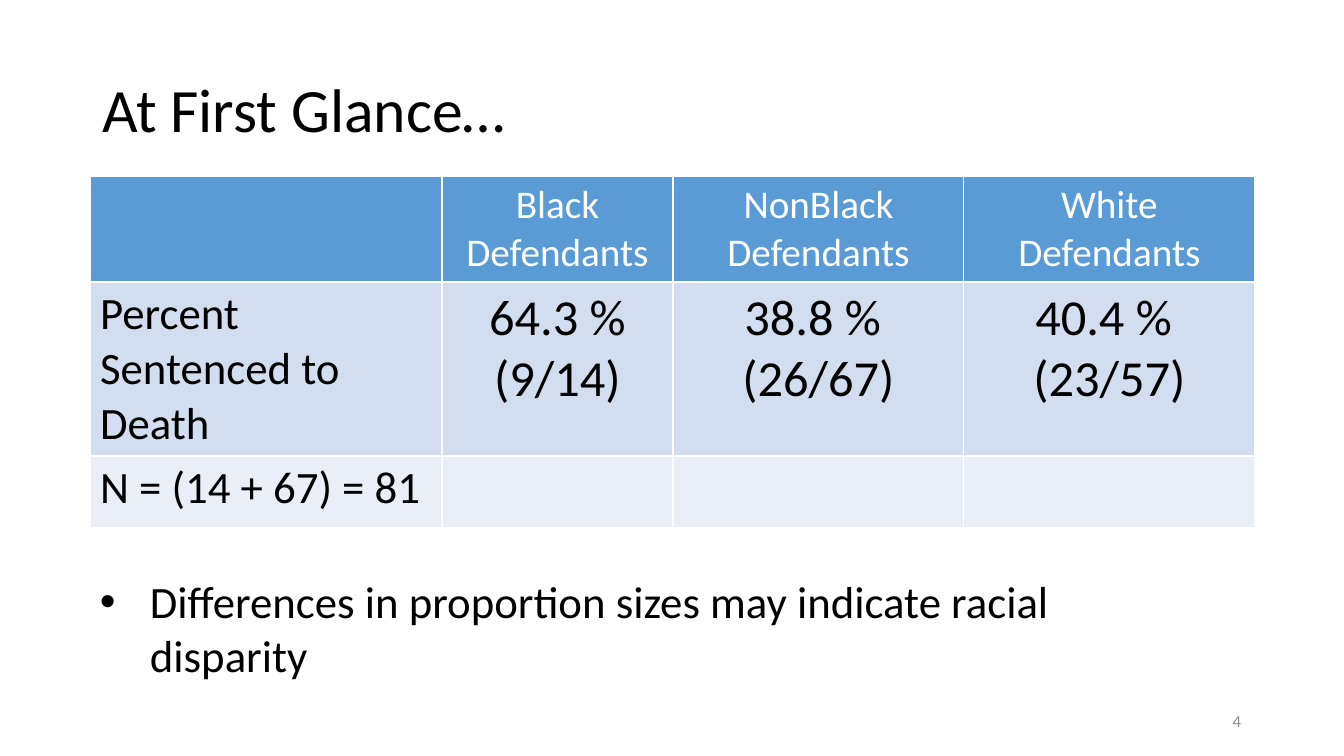
from lxml import etree
from pptx import Presentation
from pptx.dml.color import RGBColor
from pptx.enum.text import MSO_ANCHOR, MSO_AUTO_SIZE, PP_ALIGN
from pptx.oxml.ns import qn
from pptx.util import Emu, Pt

LEFT, CENTER, RIGHT = PP_ALIGN.LEFT, PP_ALIGN.CENTER, PP_ALIGN.RIGHT
TOP, MIDDLE = MSO_ANCHOR.TOP, MSO_ANCHOR.MIDDLE
NO_AUTOFIT = MSO_AUTO_SIZE.NONE
TITLE_ONLY = 5
EMU_PER_PX = 914400 / 100.8
FONT = "Calibri"
COLORS = {
    "text": "000000",
    "white": "FFFFFF",
    "number": "8C8C8C",
    "header": "5B9BD5",
    "band": "D2DEEF",
    "light": "EAEFF7",
}
COLUMN_WIDTHS = [352, 231, 291, 291]
ROWS = [
    (106, "header", "white", 28, 28,
     [[], ["Black Defendants"], ["NonBlack Defendants"], ["White Defendants"]]),
    (174, "band", "text", 32, 36,
     [["Percent Sentenced to Death"], ["64.3 %", "(9/14)"],
      ["38.8 % ", "(26/67)"], ["40.4 % ", "(23/57)"]]),
    (72, "light", "text", 32, 32, [["N = (14 + 67) = 81"], [], [], []]),
]


def px(length):
    return Emu(round(length * EMU_PER_PX))


class SlideBuilder:
    def __init__(self, page):
        self.page = page

    def add_lines(self, frame, lines, size, color, align=LEFT):
        for index, line in enumerate(lines):
            para = frame.add_paragraph() if index else frame.paragraphs[0]
            para.alignment = align
            span = para.add_run()
            span.text = line
            span.font.name = FONT
            span.font.size = Pt(size)
            span.font.bold = False
            span.font.color.rgb = RGBColor.from_string(COLORS[color])

    def title(self, text, left, top, width, height):
        box = self.page.shapes.title
        box.left, box.top, box.width, box.height = map(px, (left, top, width, height))
        frame = box.text_frame
        frame.auto_size = NO_AUTOFIT
        frame.vertical_anchor = MIDDLE
        self.add_lines(frame, [text], 44, "text")
        frame.paragraphs[0].line_spacing = 0.9

    def text(self, text, left, top, width, height, size, color, align=LEFT, anchor=TOP):
        box = self.page.shapes.add_textbox(*map(px, (left, top, width, height)))
        frame = box.text_frame
        frame.word_wrap = True
        frame.vertical_anchor = anchor
        self.add_lines(frame, [text], size, color, align)
        return frame

    def bullet(self, text, left, top, width, height, size, indent):
        frame = self.text(text, left, top, width, height, size, "text")
        properties = frame.paragraphs[0]._p.get_or_add_pPr()
        properties.set("marL", str(px(indent)))
        properties.set("indent", str(-px(indent)))
        etree.SubElement(properties, qn("a:buFont"), typeface="Arial")
        etree.SubElement(properties, qn("a:buChar"), char="•")

    def borders(self, cell):
        properties = cell._tc.get_or_add_tcPr()
        for index, side in enumerate(("lnL", "lnR", "lnT", "lnB")):
            line = etree.Element(qn(f"a:{side}"), w=str(Pt(1)))
            fill = etree.SubElement(line, qn("a:solidFill"))
            etree.SubElement(fill, qn("a:srgbClr"), val=COLORS["white"])
            properties.insert(index, line)

    def table(self, left, top, widths, rows):
        height = sum(row[0] for row in rows)
        frame = self.page.shapes.add_table(
            len(rows), len(widths), *map(px, (left, top, sum(widths), height)))
        table = frame.table
        for column, width in zip(table.columns, widths):
            column.width = px(width)
        for row, (height, fill, color, label_size, size, entries) in zip(table.rows, rows):
            row.height = px(height)
            for index, (cell, lines) in enumerate(zip(row.cells, entries)):
                cell.fill.solid()
                cell.fill.fore_color.rgb = RGBColor.from_string(COLORS[fill])
                self.borders(cell)
                self.add_lines(cell.text_frame, lines, size if index else label_size,
                               color, CENTER if index else LEFT)


def main():
    deck = Presentation()
    deck.slide_width, deck.slide_height = px(1344), px(756)
    slide = SlideBuilder(deck.slides.add_slide(deck.slide_layouts[TITLE_ONLY]))
    slide.title("At First Glance…", 92, 40, 1159, 146)
    slide.text("4", 949, 701, 302, 40, 12, "number", RIGHT, MIDDLE)
    slide.table(90, 176, COLUMN_WIDTHS, ROWS)
    slide.bullet("Differences in proportion sizes may indicate racial disparity",
                 90, 569, 1127, 118, 32, 50)
    deck.save("out.pptx")


if __name__ == "__main__":
    main()
